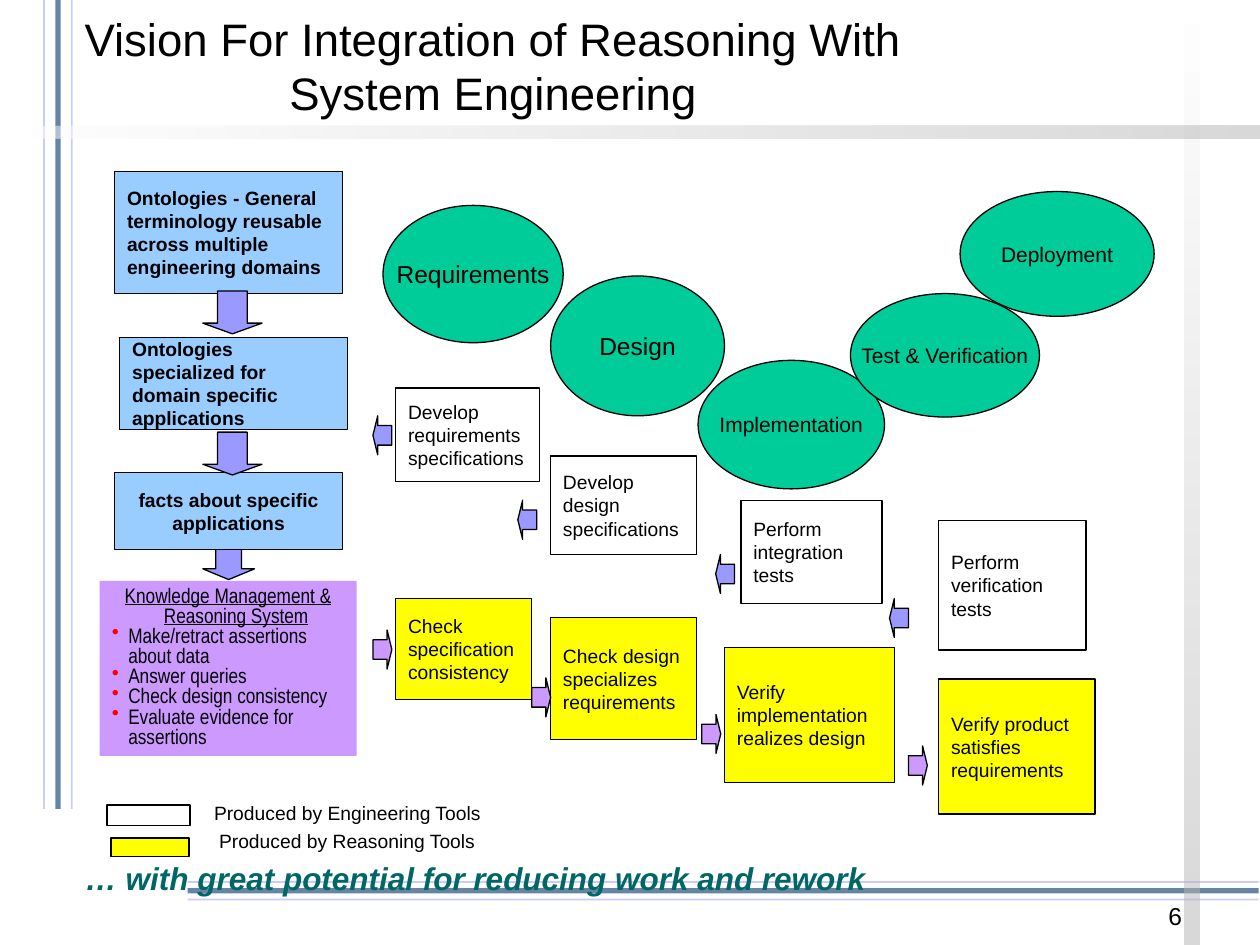
from dataclasses import dataclass

from lxml import etree
from pptx import Presentation
from pptx import util as u
from pptx.dml.color import RGBColor
from pptx.enum import shapes, text
from pptx.oxml.ns import qn

SHAPE = shapes.MSO_SHAPE
ALIGN = text.PP_ALIGN
ANCHOR = text.MSO_ANCHOR


@dataclass(frozen=True)
class Theme:
    font: str = "Arial"
    narrow: str = "Arial Narrow"
    black: str = "000000"
    white: str = "FFFFFF"
    gray: str = "B2B2B2"
    navy: str = "003366"
    teal: str = "006666"
    green: str = "00CC99"
    sky: str = "99CCFF"
    periwinkle: str = "9999FF"
    lilac: str = "CC99FF"
    yellow: str = "FFFF00"
    red: str = "FF0000"
    title: int = 26
    closing: int = 18
    phase: int = 14
    small_phase: int = 12
    body: int = 11
    outline: float = 0.75


class Board:
    COLUMNS, ROWS = 100, 75

    def __init__(self, prs, theme):
        self.theme = theme
        self.slide = prs.slides.add_slide(prs.slide_layouts[6])
        self.column = prs.slide_width / self.COLUMNS
        self.row = prs.slide_height / self.ROWS

    def place(self, x, y, w, h):
        return (u.Emu(round(x * self.column)), u.Emu(round(y * self.row)),
                u.Emu(round(w * self.column)), u.Emu(round(h * self.row)))

    def fade(self, sp, percent):
        for color in sp._element.spPr.iter(qn("a:srgbClr")):
            etree.SubElement(color, qn("a:alpha"), val=str(percent * 1000))

    def set_text(self, sp, words, size, align=ALIGN.LEFT, bold=False, italic=False,
                 color=None, anchor=ANCHOR.MIDDLE, wrap=True):
        tf = sp.text_frame
        tf.word_wrap = wrap
        tf.vertical_anchor = anchor
        tf.text = words
        for p in tf.paragraphs:
            p.alignment = align
            p.font.name = self.theme.font
            p.font.size = u.Pt(size)
            p.font.bold = bold
            p.font.italic = italic
            p.font.color.rgb = RGBColor.from_string(color or self.theme.black)
        return tf

    def label(self, area, words, size, anchor=ANCHOR.TOP, **style):
        sp = self.slide.shapes.add_textbox(*self.place(*area))
        self.set_text(sp, words, size, anchor=anchor, **style)

    def shape(self, area, fill, kind=SHAPE.RECTANGLE, outlined=True):
        sp = self.slide.shapes.add_shape(kind, *self.place(*area))
        sp.shadow.inherit = False
        sp.fill.solid()
        sp.fill.fore_color.rgb = RGBColor.from_string(fill)
        if outlined:
            sp.line.color.rgb = RGBColor.from_string(self.theme.black)
            sp.line.width = u.Pt(self.theme.outline)
        else:
            sp.line.fill.background()
        return sp

    def box(self, area, fill, words, **style):
        self.set_text(self.shape(area, fill), words, self.theme.body, **style)

    def phase(self, area, words, size):
        sp = self.shape(area, self.theme.green, SHAPE.OVAL)
        self.set_text(sp, words, size, align=ALIGN.CENTER, wrap=False)

    def arrow(self, area, fill, kind=SHAPE.RIGHT_ARROW, rotation=0):
        sp = self.shape(area, fill, kind)
        sp.adjustments[0], sp.adjustments[1] = 0.5, 0.25
        sp.rotation = rotation

    def rule(self, x1, y1, x2, y2, color, width, opacity):
        ends = self.place(x1, y1, x2, y2)
        line = self.slide.shapes.add_connector(shapes.MSO_CONNECTOR.STRAIGHT, *ends)
        line.line.color.rgb = RGBColor.from_string(color)
        line.line.width = u.Pt(width)
        self.fade(line, opacity)
        etree.SubElement(line._element.spPr, qn("a:effectLst"))

    def gradient_bar(self, area, rotation=0):
        sp = self.shape(area, self.theme.white, outlined=False)
        sp.fill.gradient()
        sp.fill.gradient_angle = 0
        for stop, color in zip(sp.fill.gradient_stops, (self.theme.white, self.theme.gray)):
            stop.color.rgb = RGBColor.from_string(color)
        self.fade(sp, 50)
        sp.rotation = rotation

    def bullet_panel(self, area, heading, items):
        t = self.theme
        sp = self.shape(area, t.lilac, outlined=False)
        tf = self.set_text(sp, "\n".join([heading, *items]), t.small_phase, anchor=ANCHOR.TOP)
        for i, p in enumerate(tf.paragraphs):
            p.line_spacing = 0.8
            p.font.name = t.narrow
            pPr = p._p.get_or_add_pPr()
            pPr.set("marL", str(u.Inches(0.13)))
            pPr.set("indent", str(-u.Inches(0.13)))
            if i == 0:
                p.alignment = ALIGN.CENTER
                p.font.underline = True
                continue
            color = etree.Element(qn("a:buClr"))
            etree.SubElement(color, qn("a:srgbClr"), val=t.red)
            bullet = etree.Element(qn("a:buChar"), char="•")
            defaults = pPr.find(qn("a:defRPr"))
            defaults.addprevious(color)
            defaults.addprevious(bullet)


def main():
    prs = Presentation()
    prs.slide_width, prs.slide_height = u.Inches(10), u.Inches(7.5)
    t = Theme()
    s = Board(prs, t)

    for offset, color, width, opacity in ((-1, t.periwinkle, 1, 50), (1, t.periwinkle, 1, 50),
                                          (0, t.navy, 3, 60)):
        s.rule(4.6 + 1.1 * offset, 0, 4.6 + 1.1 * offset, 64.2, color, width, opacity)
        s.rule(99.9, 70.7 + 0.7 * offset, 14.9, 70.7 + 0.7 * offset, color, width, opacity)
    s.gradient_bar((57.1, 36.9, 75, 1.2), rotation=90)
    s.gradient_bar((0, 10, 100, 1))

    s.label((5, 0, 68.3, 10.4), "Vision For Integration of Reasoning With System Engineering",
            t.title, align=ALIGN.CENTER, anchor=ANCHOR.MIDDLE)
    s.label((5.8, 67.7, 92.2, 4), "… with great potential for reducing work and rework",
            t.closing, bold=True, italic=True, color=t.teal)

    s.arrow((16.1, 42.6, 4.1, 3.4), t.periwinkle, SHAPE.DOWN_ARROW)
    for area, words, align in (
        ((9.1, 13.6, 18.1, 9.7),
         "Ontologies - General terminology reusable across multiple engineering domains", ALIGN.LEFT),
        ((9.5, 26.8, 18.1, 7.3),
         "Ontologies specialized for domain specific applications", ALIGN.LEFT),
        ((9.1, 37.5, 18.1, 6.1), "facts about specific applications", ALIGN.CENTER),
    ):
        s.box(area, t.sky, words, bold=True, align=align)
    for y in (23.1, 34.3):
        s.arrow((16.1, y, 4.7, 3.4), t.periwinkle, SHAPE.DOWN_ARROW)

    for area, words in (
        ((31.4, 30.8, 11.4, 7.4), "Develop requirements specifications"),
        ((43.7, 36.2, 11.6, 7.8), "Develop design specifications"),
        ((58.8, 39.7, 11.2, 8.2), "Perform integration tests"),
        ((74.5, 41.3, 11.7, 10.3), "Perform verification\ntests"),
    ):
        s.box(area, t.white, words)
    for area, words in (
        ((31.4, 47.5, 10.8, 8), "Check specification consistency"),
        ((43.7, 49, 11.6, 9.7), "Check design specializes requirements"),
        ((57.5, 51.4, 13.5, 10.7), "Verify implementation realizes design"),
        ((74.5, 53.9, 12.4, 10.7), "Verify product satisfies requirements"),
    ):
        s.box(area, t.yellow, words)

    for x, y in ((29.6, 33), (41.1, 39.7), (56.8, 44), (70.6, 47.5)):
        s.arrow((x, y, 1.5, 3.1), t.periwinkle, rotation=180)
    for x, y in ((29.6, 50), (42.2, 53.8), (55.7, 56.7), (72.1, 59.2)):
        s.arrow((x, y, 1.5, 3.1), t.lilac)

    for area, words, size in (
        ((43.7, 21.9, 13.8, 11.1), "Design", t.phase),
        ((55.4, 28.6, 14.8, 10.2), "Implementation", t.small_phase),
        ((67.5, 23.3, 15, 9.8), "Test & Verification", t.small_phase),
        ((76.2, 15.2, 15.4, 9.9), "Deployment", t.small_phase),
        ((30.4, 16.3, 14.3, 10.9), "Requirements", t.phase),
    ):
        s.phase(area, words, size)

    s.bullet_panel((7.9, 46.1, 20.4, 13.9), "Knowledge Management & Reasoning System",
                   ("Make/retract assertions about data", "Answer queries",
                    "Check design consistency", "Evaluate evidence for assertions"))

    for swatch, fill, area, words in (
        ((8.5, 63.9, 6.6, 1.6), t.white, (16, 63.1, 27.1, 2.9), "Produced by Engineering Tools"),
        ((8.8, 66.5, 6.2, 1.5), t.yellow, (16.4, 65.3, 24.7, 2.9), "Produced by Reasoning Tools"),
    ):
        s.shape(swatch, fill)
        s.label(area, words, t.body)
    s.label((71.5, 71, 23.3, 4), "6", t.phase, align=ALIGN.RIGHT)

    prs.save("out.pptx")


if __name__ == "__main__":
    main()
